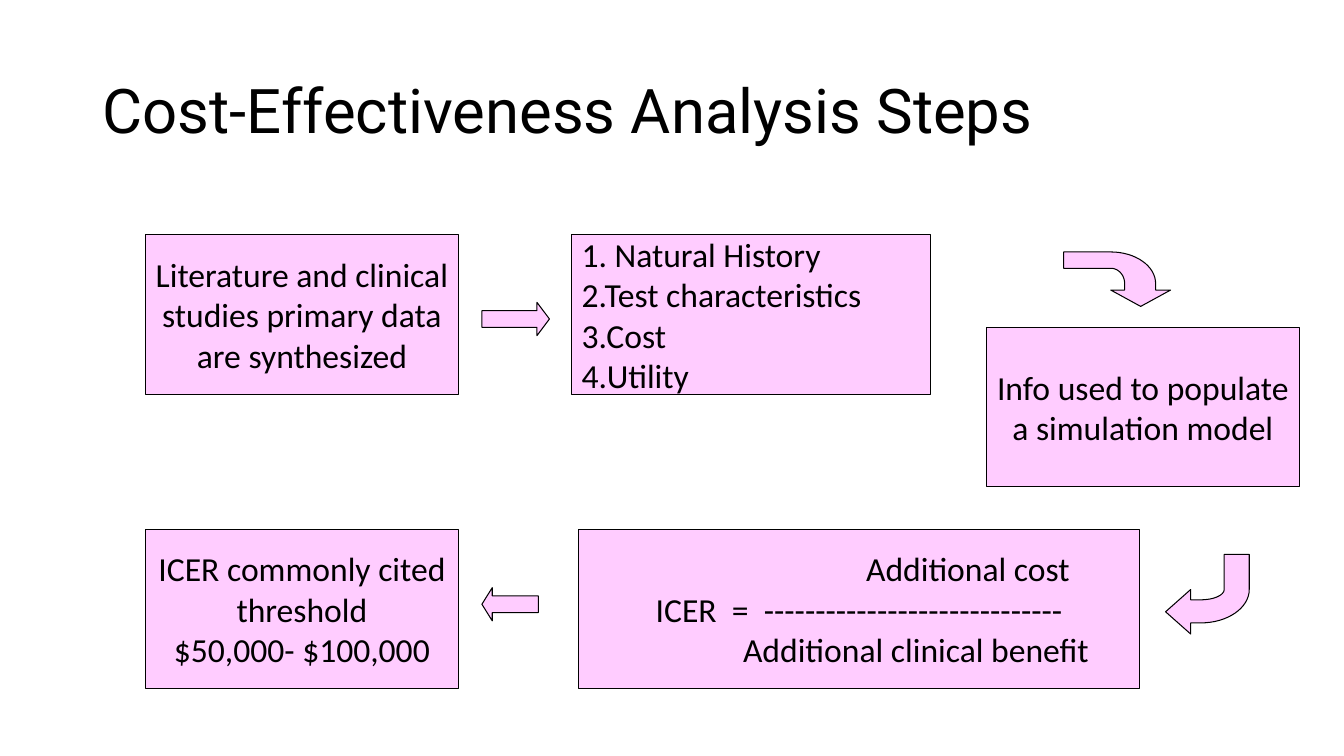
"""Build the cost-effectiveness analysis steps slide."""
from math import cos, pi, sin

from pptx import Presentation
from pptx.dml.color import RGBColor
from pptx.enum.shapes import MSO_SHAPE
from pptx.enum.text import MSO_ANCHOR, PP_ALIGN
from pptx.util import Inches, Pt

COLORS = {"fill": "FFCCFF", "ink": "000000"}
TITLE = "Cost-Effectiveness Analysis Steps"
LEFT, MIDDLE, RIGHT = 1.44, 5.67, 9.78
TOP, LOWER, BOTTOM = 2.33, 3.25, 5.25
STEP_WIDTH, STEP_HEIGHT = 3.11, 1.58
ARROW_LEFT, ARROW_HEIGHT = 4.78, 0.33

# Each step: left, top, width, alignment, lines of (text, left indent)
STEPS = [
    (LEFT, TOP, STEP_WIDTH, PP_ALIGN.CENTER,
     [("Literature and clinical studies primary data are synthesized", 0)]),
    (MIDDLE, TOP, 3.56, PP_ALIGN.LEFT,
     [("1. Natural History", 0), ("2.Test characteristics", 0), ("3.Cost", 0), ("4.Utility", 0)]),
    (RIGHT, LOWER, STEP_WIDTH, PP_ALIGN.CENTER,
     [("Info used to populate a simulation model", 0)]),
    (5.74, BOTTOM, 5.56, PP_ALIGN.CENTER,
     [("Additional cost", 2.16),
      ("ICER  =  -----------------------------", 0),
      ("Additional clinical benefit", 1.13)]),
    (LEFT, BOTTOM, STEP_WIDTH, PP_ALIGN.CENTER,
     [("ICER commonly cited threshold", 0), ("$50,000- $100,000", 0)]),
]
STRAIGHT_ARROWS = [
    (MSO_SHAPE.RIGHT_ARROW, 3.0, 0.67, 0.375),
    (MSO_SHAPE.LEFT_ARROW, 5.83, 0.56, 0.312),
]
BENT_ARROWS = [(10.81, 2.24, 0.54, 1.06, 90), (11.56, 5.5, 0.83, 0.79, 180)]


def bend(radius_x, radius_y, steps=16):
    """Return a quarter ellipse from the stem side to the head side."""
    angles = [pi / 2 * step / steps for step in range(steps + 1)]
    return [(0.58 - radius_x * cos(angle), 0.56 - radius_y * sin(angle)) for angle in angles]


BENT_OUTLINE = ([(0, 1)] + bend(0.58, 0.42) + [(0.7, 0.14), (0.7, 0), (1, 0.28), (0.7, 0.56), (0.7, 0.43)]
                + bend(0.28, 0.13)[::-1] + [(0.3, 1)])


def paint(shape):
    """Give a shape the common fill and outline."""
    shape.shadow.inherit = False
    shape.fill.solid()
    shape.fill.fore_color.rgb = RGBColor.from_string(COLORS["fill"])
    shape.line.color.rgb = RGBColor.from_string(COLORS["ink"])
    shape.line.width = Pt(0.75)


def write(shape, lines, size, font, alignment):
    """Fill a shape with formatted lines."""
    frame = shape.text_frame
    frame.word_wrap = True
    frame.vertical_anchor = MSO_ANCHOR.MIDDLE
    frame.text = "\n".join(text for text, indent in lines)
    for paragraph, (text, indent) in zip(frame.paragraphs, lines):
        paragraph.alignment = alignment
        if indent:
            paragraph.runs[0].font.bold = False
            paragraph._p.get_or_add_pPr().set("marL", str(Inches(indent)))
        for run in paragraph.runs:
            run.font.size = Pt(size)
            run.font.name = font
            run.font.color.rgb = RGBColor.from_string(COLORS["ink"])


def add_bent_arrow(shapes, left, top, width, height, rotation):
    """Draw the bent outline scaled to its frame, then turn it."""
    points = [(Inches(left + width * x), Inches(top + height * y)) for x, y in BENT_OUTLINE]
    builder = shapes.build_freeform(*points[0])
    builder.add_line_segments(points[1:], close=True)
    arrow = builder.convert_to_shape()
    arrow.rotation = rotation
    paint(arrow)


def main():
    """Assemble and save the slide."""
    presentation = Presentation()
    presentation.slide_width, presentation.slide_height = Inches(13.33), Inches(7.5)
    shapes = presentation.slides.add_slide(presentation.slide_layouts[6]).shapes

    title = shapes.add_textbox(Inches(0.92), Inches(0.4), Inches(11.5), Inches(1.45))
    write(title, [(TITLE, 0)], 44, "Roboto", PP_ALIGN.LEFT)
    title.text_frame.paragraphs[0].line_spacing = 0.9

    for left, top, width, alignment, lines in STEPS:
        box = shapes.add_shape(MSO_SHAPE.RECTANGLE, Inches(left), Inches(top),
                               Inches(width), Inches(STEP_HEIGHT))
        paint(box)
        write(box, lines, 24, "Calibri", alignment)

    for kind, top, width, head in STRAIGHT_ARROWS:
        arrow = shapes.add_shape(kind, Inches(ARROW_LEFT), Inches(top),
                                 Inches(width), Inches(ARROW_HEIGHT))
        arrow.adjustments[1] = head * width / ARROW_HEIGHT if head > 1 else head
        paint(arrow)

    for placement in BENT_ARROWS:
        add_bent_arrow(shapes, *placement)

    presentation.save("out.pptx")


if __name__ == "__main__":
    main()
